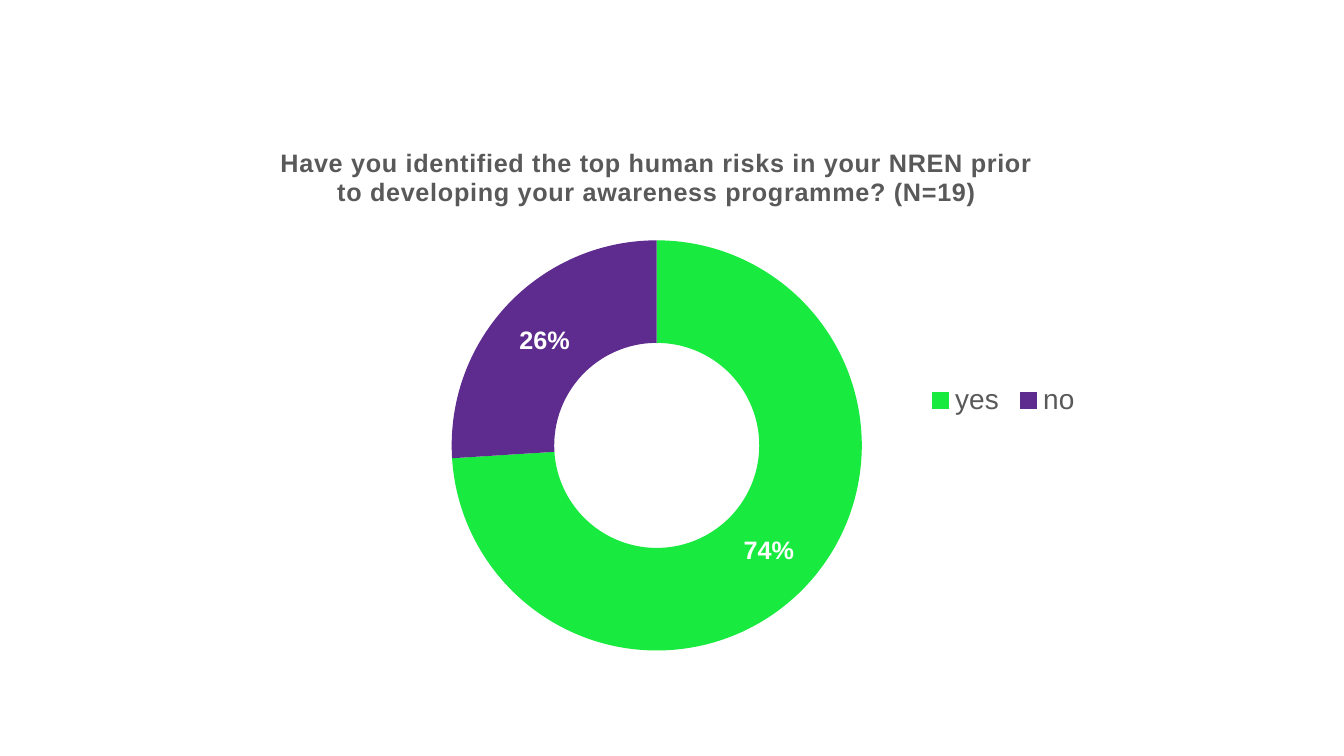
import pptx
import pptx.chart.data
import pptx.dml.color
import pptx.enum.chart
import pptx.oxml
import pptx.oxml.ns
import pptx.util

Cm = pptx.util.Cm
RGBColor = pptx.dml.color.RGBColor

GREEN = RGBColor(0x18, 0xEA, 0x3F)
PURPLE = RGBColor(0x5E, 0x2B, 0x8F)
GREY = RGBColor(0x59, 0x59, 0x59)
WHITE = RGBColor(0xFF, 0xFF, 0xFF)
FONT = "Arial"


def format_font(font, size, color, bold=False):
    font.name = FONT
    font.size = pptx.util.Pt(size)
    font.bold = bold
    font.color.rgb = color


def add_text(p, text, size, color, bold=False, spacing=0):
    r = p.add_run()
    r.text = text
    format_font(r.font, size, color, bold)
    r.font._element.set("spc", str(spacing))
    return r


def set_layout(element, inner=False, **fractions):
    """Place a chart part at fractions of the chart's box."""
    for old in element.findall(pptx.oxml.ns.qn("c:layout")):
        element.remove(old)
    target = '<c:layoutTarget val="inner"/>' if inner else ""
    modes = "".join(f'<c:{k}Mode val="edge"/>' for k in "xy")
    places = "".join(f'<c:{k} val="{v}"/>' for k, v in fractions.items())
    layout = pptx.oxml.parse_xml(
        f'<c:layout {pptx.oxml.ns.nsdecls("c")}><c:manualLayout>'
        f"{target}{modes}{places}</c:manualLayout></c:layout>")
    # The layout follows the text of a title and the position of a legend
    lead = [e for e in element
            if e.tag in (pptx.oxml.ns.qn("c:tx"), pptx.oxml.ns.qn("c:legendPos"))]
    element.insert(len(lead), layout)


def add_doughnut(s, left, top, width, height, title, answers):
    data = pptx.chart.data.CategoryChartData()
    data.categories = [name for name, _, _ in answers]
    data.add_series("Series 1", [value for _, value, _ in answers])
    chart = s.shapes.add_chart(pptx.enum.chart.XL_CHART_TYPE.DOUGHNUT,
                               left, top, width, height, data).chart
    chart.font.name = FONT
    chart.font.size = pptx.util.Pt(10)

    # Title
    chart.has_title = True
    p = chart.chart_title.text_frame.paragraphs[0]
    add_text(p, title, 18, GREY, bold=True, spacing=50)
    chart.chart_title.include_in_layout = False
    set_layout(chart.chart_title._element, x=0.17, y=0)

    # Ring
    plot = chart.plots[0]
    plot.vary_by_categories = True
    plot._element.find(pptx.oxml.ns.qn("c:holeSize")).set("val", "50")
    set_layout(chart._chartSpace.chart.plotArea, inner=True,
               x=0.35, y=0.09, w=0.42, h=0.83)
    for i, (_, _, color) in enumerate(answers):
        fill = plot.series[0].points[i].format.fill
        fill.solid()
        fill.fore_color.rgb = color

    # Percentages
    labels = plot.series[0].data_labels
    labels.show_percentage = True
    labels.show_value = False
    labels.number_format = "0%"
    labels.number_format_is_linked = False
    format_font(labels.font, 18, WHITE, bold=True)

    # Legend
    chart.has_legend = True
    legend = chart.legend
    legend.position = pptx.enum.chart.XL_LEGEND_POSITION.TOP
    legend.include_in_layout = False
    format_font(legend.font, 20, GREY)
    set_layout(legend._element, x=0.83, y=0.39, w=0.17, h=0.08)


def main():
    prs = pptx.Presentation()
    prs.slide_width, prs.slide_height = Cm(33.87), Cm(19.05)
    s = prs.slides.add_slide(prs.slide_layouts[6])
    add_doughnut(
        s, Cm(2.77), Cm(3.58), Cm(24.61), Cm(15.14),
        "Have you identified the top human risks in your NREN prior "
        "to developing your awareness programme? (N=19)",
        [("yes", 74, GREEN), ("no", 26, PURPLE)])
    prs.save("out.pptx")


if __name__ == "__main__":
    main()
